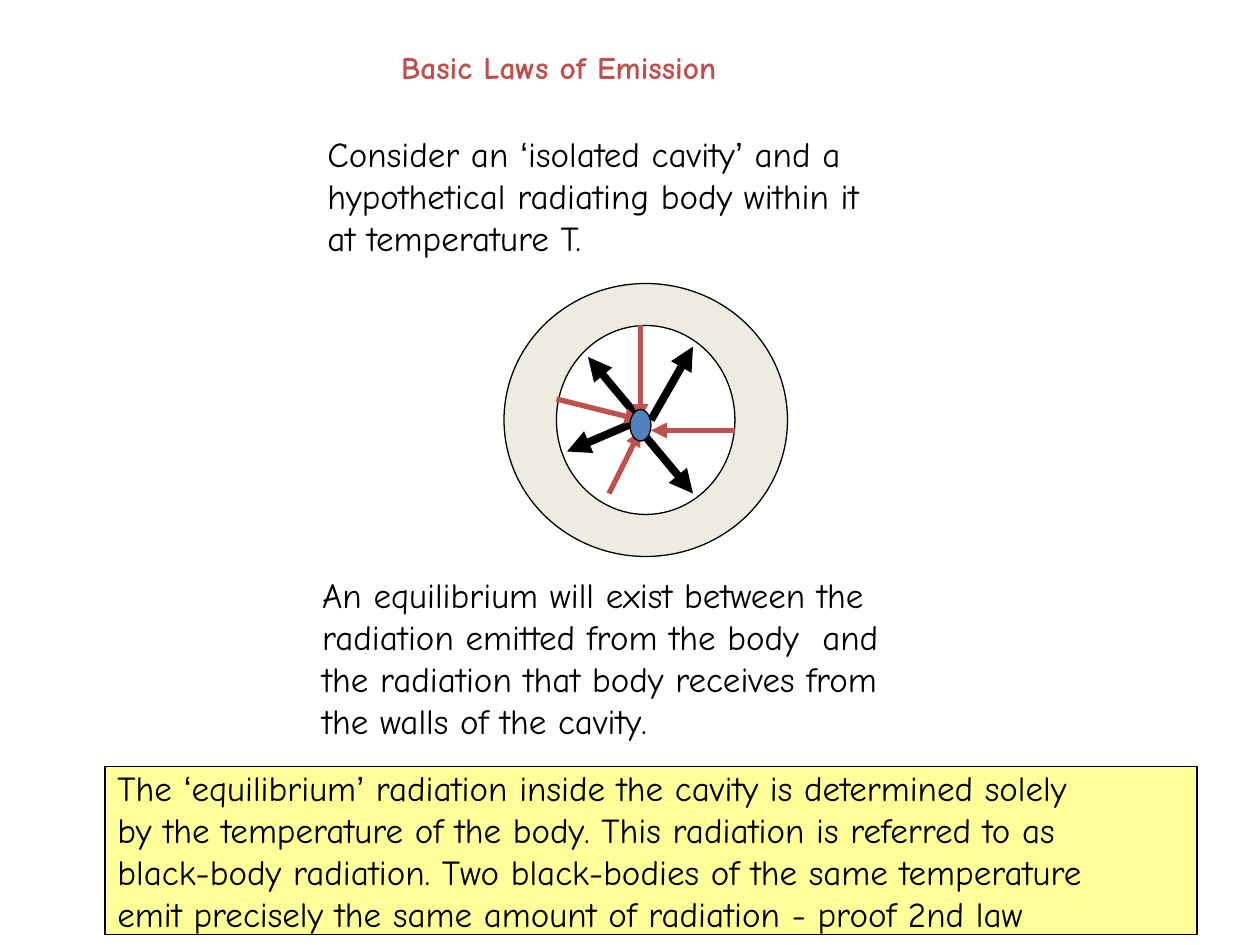
from lxml import etree
from pptx import Presentation
from pptx.dml.color import RGBColor
from pptx.enum.shapes import MSO_CONNECTOR, MSO_SHAPE
from pptx.enum.text import MSO_ANCHOR, PP_ALIGN
from pptx.oxml.ns import qn
from pptx.util import Pt

LINE = MSO_CONNECTOR.STRAIGHT
OVAL, RECT = MSO_SHAPE.OVAL, MSO_SHAPE.RECTANGLE
TOP, MIDDLE = MSO_ANCHOR.TOP, MSO_ANCHOR.MIDDLE
LEFT = PP_ALIGN.LEFT
FONT, QUOTE_FONT = "Comic Neue", "Arial"
BLACK, RED, BLUE = "000000", "C0504D", "4F81BD"
WHITE, CREAM, YELLOW = "FFFFFF", "EEECE1", "FFFF99"


def color(code):
    return RGBColor.from_string(code)


def split_quotes(line):
    """Yield (text, font) pairs, with curly quotes in their own font."""
    part = ""
    for char in line:
        if char in "‘’":
            if part:
                yield part, FONT
            yield char, QUOTE_FONT
            part = ""
        else:
            part += char
    if part:
        yield part, FONT


def write(shape, lines, size=20, ink=BLACK, bold=False, anchor=TOP):
    frame = shape.text_frame
    frame.word_wrap = True
    frame.vertical_anchor = anchor
    for i, line in enumerate(lines):
        para = frame.add_paragraph() if i else frame.paragraphs[0]
        para.alignment = LEFT
        for text, face in split_quotes(line):
            run = para.add_run()
            run.text = text
            font = run.font
            font.name, font.size, font.bold = face, Pt(size), bold
            font.color.rgb = color(ink)


def place(shape, box):
    shape.left, shape.top, shape.width, shape.height = map(Pt, box)


def add_shape(slide, kind, box, fill):
    shape = slide.shapes.add_shape(kind, *map(Pt, box))
    shape.shadow.inherit = False
    shape.fill.solid()
    shape.fill.fore_color.rgb = color(fill)
    shape.line.color.rgb = color(BLACK)
    shape.line.width = Pt(0.75)
    return shape


def add_arrow(slide, start, end, ink, width):
    arrow = slide.shapes.add_connector(LINE, *map(Pt, start + end))
    arrow.line.color.rgb = color(ink)
    arrow.line.width = Pt(width)
    tip = etree.SubElement(arrow.line._get_or_add_ln(), qn("a:tailEnd"))
    tip.set("type", "triangle")
    etree.SubElement(arrow._element.spPr, qn("a:effectLst"))


def add_title(slide, box):
    title = slide.shapes.title
    place(title, box)
    write(title, ["Basic Laws of Emission"], size=18, ink=RED, bold=True)


def add_text(slide, box, lines):
    write(slide.shapes.add_textbox(*map(Pt, box)), lines)


def add_cavity(slide, box):
    """Draw the walled cavity, its rays and the body at its heart."""
    left, top, width, height = box

    def at(x, y):
        return left + x, top + y

    add_shape(slide, OVAL, box, CREAM)
    add_shape(slide, OVAL, at(30, 24) + (102, 108), WHITE)
    emitted = [
        ((84, 78), (108, 36)),
        ((78, 84), (108, 120)),
        ((78, 78), (48, 42)),
        ((78, 78), (36, 96)),
    ]
    received = [
        ((60, 120), (78, 84)),
        ((78, 24), (78, 78)),
        ((132, 84), (84, 84)),
        ((30, 66), (78, 78)),
    ]
    for rays, ink, weight in ((emitted, BLACK, 4.5), (received, RED, 3)):
        for start, end in rays:
            add_arrow(slide, at(*start), at(*end), ink, weight)
    add_shape(slide, OVAL, at(72, 72) + (12, 18), BLUE)


def add_banner(slide, box, lines):
    write(add_shape(slide, RECT, box, YELLOW), lines, anchor=MIDDLE)


def main():
    deck = Presentation()
    deck.slide_width, deck.slide_height = Pt(720), Pt(540)
    slide = deck.slides.add_slide(deck.slide_layouts.get_by_name("Title Only"))
    add_title(slide, (222, 24, 280, 36))
    add_cavity(slide, (288, 162, 162, 156))
    add_text(slide, (180, 72, 366, 79), [
        "Consider an ‘isolated cavity’ and a hypothetical radiating body within it",
        "at temperature T.",
    ])
    add_text(slide, (177, 324, 369, 103), [
        "An equilibrium will exist between the",
        "radiation emitted from the body  and",
        "the radiation that body receives from",
        "the walls of the cavity.",
    ])
    add_banner(slide, (60, 438, 624, 96), [
        "The ‘equilibrium’ radiation inside the cavity is determined solely",
        "by the temperature of the body. This radiation is referred to as",
        "black-body radiation. Two black-bodies of the same temperature",
        "emit precisely the same amount of radiation - proof 2nd law",
    ])
    deck.save("out.pptx")


if __name__ == "__main__":
    main()
